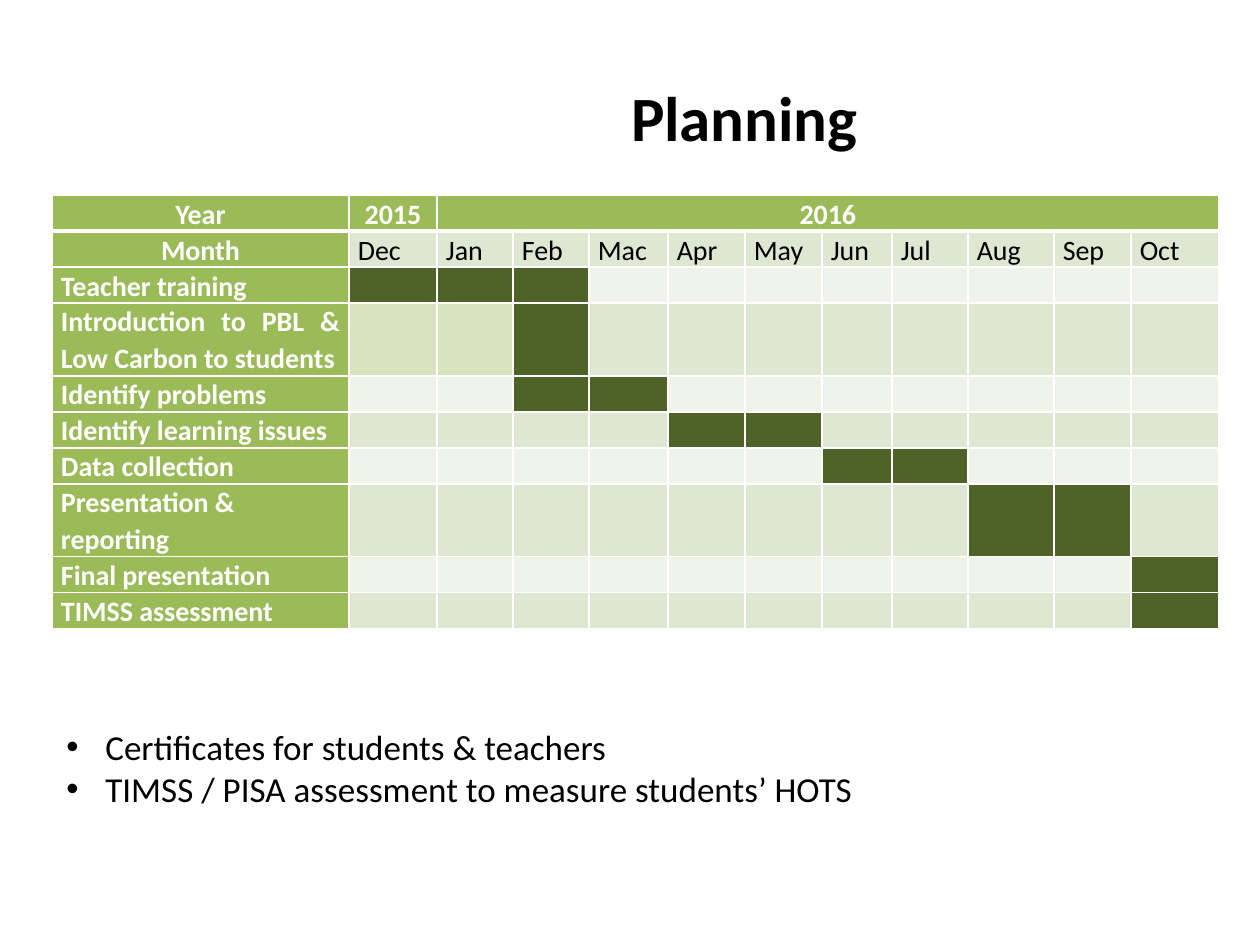
from lxml.etree import SubElement
from pptx import Presentation
from pptx.dml.color import RGBColor
from pptx.enum.text import MSO_ANCHOR as Anchor, MSO_AUTO_SIZE as AutoSize, PP_ALIGN as Align
from pptx.oxml.ns import qn
from pptx.util import Emu, Pt

EMU_PER_PX = 914400 / 126
FONT = "Calibri"
BLACK = RGBColor(0, 0, 0)
WHITE = RGBColor(255, 255, 255)
HEADER_GREEN = RGBColor(0x9B, 0xBB, 0x59)
BAND_DARK = RGBColor(0xDE, 0xE7, 0xD1)
BAND_LIGHT = RGBColor(0xEF, 0xF3, 0xEA)
PALE_GREEN = RGBColor(0xD7, 0xE4, 0xBD)
BUSY_GREEN = RGBColor(0x4F, 0x62, 0x28)

MONTHS = ["Dec", "Jan", "Feb", "Mac", "Apr", "May", "Jun", "Jul", "Aug", "Sep", "Oct"]
# Task, first month, last month, alignment, row height
TASKS = [
    ("Teacher training", "Dec", "Feb", Align.JUSTIFY, 36),
    ("Introduction to PBL & Low Carbon to students", "Feb", "Feb", Align.JUSTIFY, 73),
    ("Identify problems", "Feb", "Mac", Align.JUSTIFY, 36),
    ("Identify learning issues", "Apr", "May", Align.LEFT, 36),
    ("Data collection", "Jun", "Jul", Align.JUSTIFY, 36),
    ("Presentation & reporting", "Aug", "Sep", Align.LEFT, 73),
    ("Final presentation", "Oct", "Oct", Align.JUSTIFY, 36),
    ("TIMSS assessment", "Oct", "Oct", Align.JUSTIFY, 36),
]
PALE_CELLS = {("Introduction to PBL & Low Carbon to students", month) for month in ("Dec", "Jan")}
COLUMN_WIDTHS = [297, 88, 76, 76, 79, 77, 77, 70, 76, 86, 77, 88]
HEADER_HEIGHT = 36
BULLETS = [
    "Certificates for students & teachers",
    "TIMSS / PISA assessment to measure students’ HOTS",
]


def px(length):
    return Emu(round(length * EMU_PER_PX))


def set_attributes(target, values):
    for name, value in values.items():
        setattr(target, name, value)


def write(paragraph, text, size, color, bold=False):
    run = paragraph.add_run()
    run.text = text
    set_attributes(run.font, {"name": FONT, "size": Pt(size), "bold": bold})
    run.font.color.rgb = color


def add_text_frame(slide, left, top, width, height, anchor):
    shape = slide.shapes.add_textbox(px(left), px(top), px(width), px(height))
    set_attributes(shape.text_frame, {"word_wrap": True, "vertical_anchor": anchor})
    return shape.text_frame


def add_title(slide, text):
    frame = add_text_frame(slide, 292, 38, 905, 157, Anchor.MIDDLE)
    paragraph = frame.paragraphs[0]
    paragraph.alignment = Align.CENTER
    write(paragraph, text, 36, BLACK, bold=True)


def add_borders(cell, **widths):
    """White lines of 1 pt on all sides, except for the widths given by tag."""
    properties = cell._tc.get_or_add_tcPr()
    for tag in ("lnL", "lnR", "lnT", "lnB"):
        line = SubElement(properties, qn(f"a:{tag}"), w=str(Pt(widths.get(tag, 1))))
        fill = SubElement(line, qn("a:solidFill"))
        SubElement(fill, qn("a:srgbClr"), val=str(WHITE))


def fill_cell(cell, fill, text="", color=WHITE, bold=True, alignment=Align.CENTER):
    set_attributes(cell, {"margin_left": px(9), "margin_right": px(9),
                          "margin_top": 0, "margin_bottom": 0})
    cell.fill.solid()
    cell.fill.fore_color.rgb = fill
    paragraph = cell.text_frame.paragraphs[0]
    set_attributes(paragraph, {"alignment": alignment, "line_spacing": 1.07})
    if text:
        write(paragraph, text, 16, color, bold)
    else:
        SubElement(paragraph._p, qn("a:endParaRPr"), sz="1600")


def task_fill(row, task, month, first, last):
    position = MONTHS.index(month)
    if MONTHS.index(first) <= position <= MONTHS.index(last):
        return BUSY_GREEN
    if (task, month) in PALE_CELLS:
        return PALE_GREEN
    return BAND_DARK if row % 2 else BAND_LIGHT


def add_schedule(slide):
    heights = [HEADER_HEIGHT] * 2 + [task[-1] for task in TASKS]
    table = slide.shapes.add_table(
        len(heights), len(COLUMN_WIDTHS), px(52), px(195),
        px(sum(COLUMN_WIDTHS)), px(sum(heights))).table
    for column, width in zip(table.columns, COLUMN_WIDTHS):
        column.width = px(width)
    for row, height in zip(table.rows, heights):
        row.height = px(height)

    heavy_sides = {0: {"lnB": 3}, 1: {"lnT": 3}}
    for index, row in enumerate(table.rows):
        for cell in row.cells:
            add_borders(cell, **heavy_sides.get(index, {}))

    table.cell(0, 2).merge(table.cell(0, len(MONTHS)))
    for column, text in enumerate(["Year", "2015", "2016"]):
        fill_cell(table.cell(0, column), HEADER_GREEN, text)
    fill_cell(table.cell(1, 0), HEADER_GREEN, "Month")
    for column, month in enumerate(MONTHS, 1):
        fill_cell(table.cell(1, column), BAND_DARK, month, BLACK, False, Align.JUSTIFY)

    for row, (task, first, last, alignment, _) in enumerate(TASKS, 2):
        fill_cell(table.cell(row, 0), HEADER_GREEN, task, alignment=alignment)
        for column, month in enumerate(MONTHS, 1):
            fill_cell(table.cell(row, column), task_fill(row, task, month, first, last))


def add_bullets(slide, lines):
    frame = add_text_frame(slide, 54, 719, 1162, 97, Anchor.TOP)
    frame.auto_size = AutoSize.SHAPE_TO_FIT_TEXT
    for index, line in enumerate(lines):
        paragraph = frame.add_paragraph() if index else frame.paragraphs[0]
        properties = paragraph._p.get_or_add_pPr()
        properties.set("marL", str(px(39)))
        properties.set("indent", str(px(-39)))
        SubElement(properties, qn("a:buFont"), typeface="Arial")
        SubElement(properties, qn("a:buChar"), char="•")
        write(paragraph, line, 20, BLACK)


def main():
    presentation = Presentation()
    set_attributes(presentation, {"slide_width": px(1260), "slide_height": px(945)})
    slide = presentation.slides.add_slide(presentation.slide_layouts[6])
    add_title(slide, "Planning")
    add_schedule(slide)
    add_bullets(slide, BULLETS)
    presentation.save("out.pptx")


if __name__ == "__main__":
    main()
